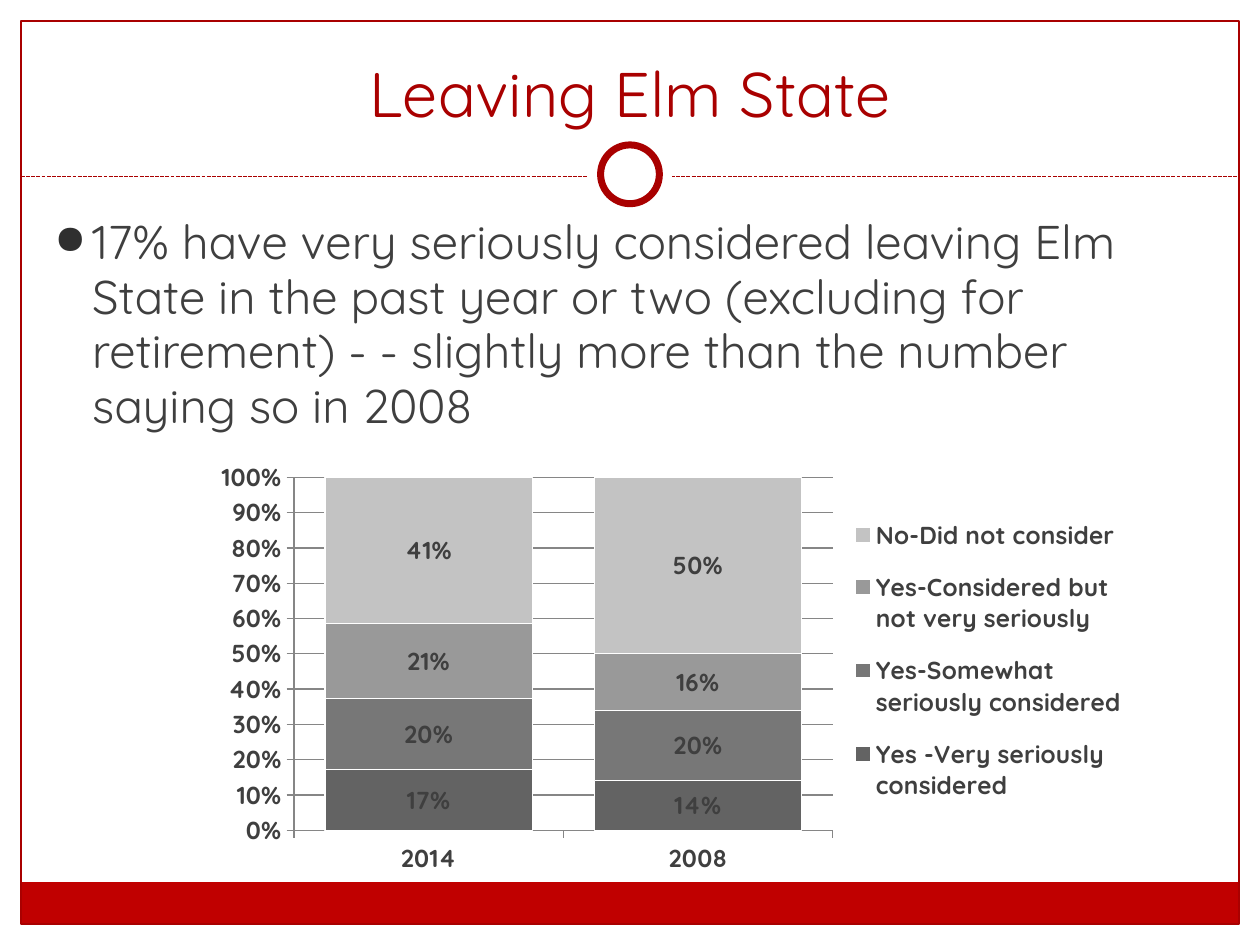
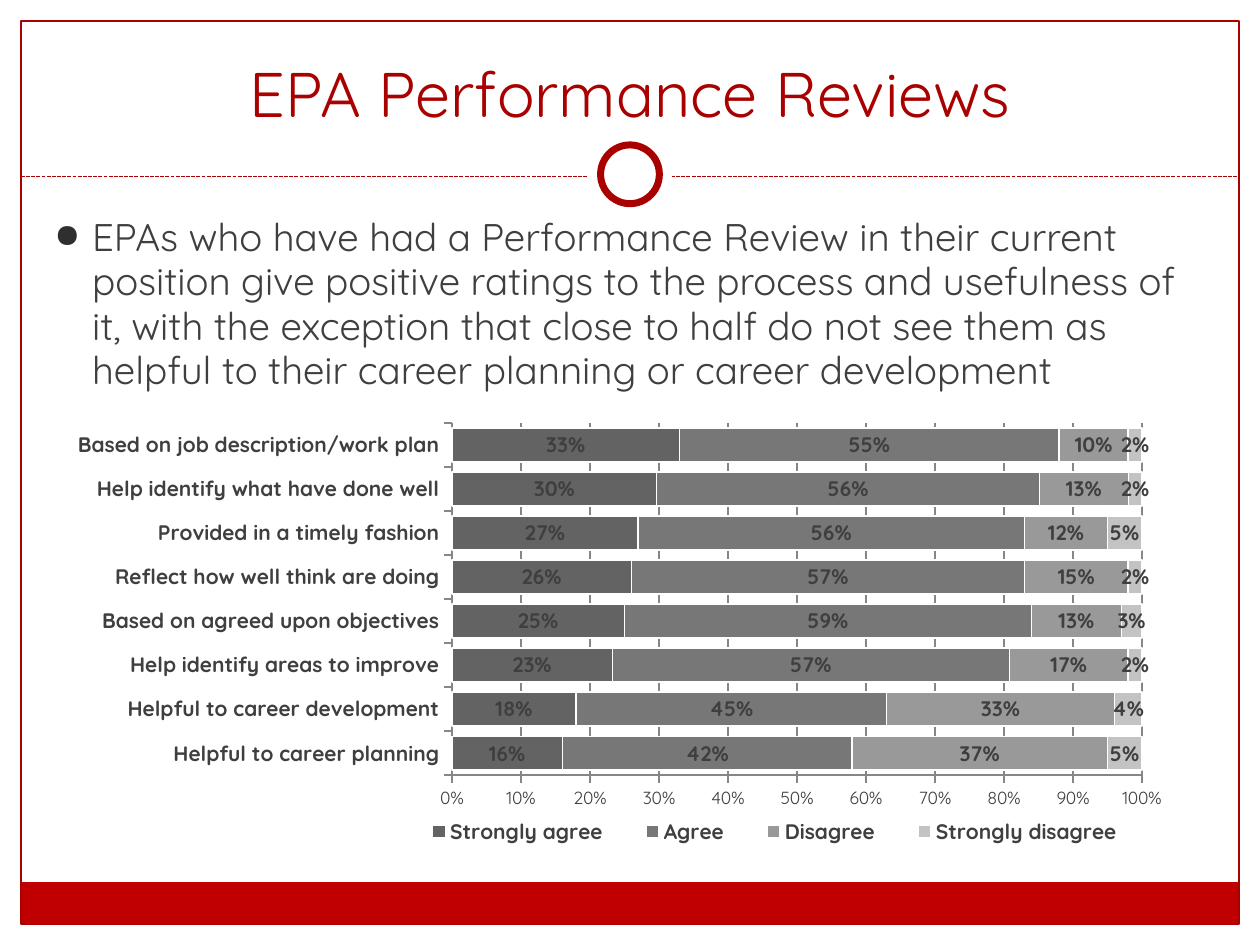
from dataclasses import dataclass

from lxml import etree
from pptx import Presentation
from pptx import util as u
from pptx.chart.data import CategoryChartData
from pptx.dml.color import RGBColor
from pptx.enum import chart as ch, dml, shapes, text
from pptx.oxml import parse_xml
from pptx.oxml.ns import nsdecls, qn


@dataclass(frozen=True)
class Theme:
    font: str = "Quicksand"
    paper: str = "FFFFFF"
    red: str = "A90000"
    band: str = "C00000"
    ink: str = "3F3F3F"
    bullet: str = "2F2F2F"
    axis: str = "868686"
    greys: tuple = ("636363", "777777", "999999", "C3C3C3")
    title_size: int = 36
    chart_size: int = 14
    label_size: int = 12
    tick_size: int = 10


THEME = Theme()
WIDTH, HEIGHT = u.Inches(10), u.Inches(7.5)
COLUMNS, ROWS = 60, 45


def grid(left, top, width, height):
    """Turn columns and rows of the slide grid into lengths."""
    col, row = WIDTH / COLUMNS, HEIGHT / ROWS
    return [u.Emu(round(v)) for v in (left * col, top * row, width * col, height * row)]


def rgb(color):
    return RGBColor.from_string(color)


def set_font(font, size, color=THEME.ink, bold=False):
    font.name, font.size, font.bold = THEME.font, u.Pt(size), bold
    font.color.rgb = rgb(color)


def set_line(line, color, width=0.75, dash=None):
    line.color.rgb = rgb(color)
    line.width = u.Pt(width)
    if dash:
        line.dash_style = dash


def write(tf, words, size, color=THEME.ink, align=text.PP_ALIGN.LEFT,
          anchor=text.MSO_ANCHOR.TOP, spacing=None):
    tf.word_wrap = True
    tf.auto_size = text.MSO_AUTO_SIZE.NONE
    tf.vertical_anchor = anchor
    p = tf.paragraphs[0]
    p.alignment = align
    p.line_spacing = spacing
    r = p.add_run()
    r.text = words
    set_font(r.font, size, color)
    return p


def add_bullet(p, indent=u.Inches(0.3)):
    pPr = p._p.get_or_add_pPr()
    pPr.set("marL", str(indent))
    pPr.set("indent", str(-indent))
    color = etree.SubElement(pPr, qn("a:buClr"))
    etree.SubElement(color, qn("a:srgbClr"), val=THEME.bullet)
    etree.SubElement(pPr, qn("a:buSzPct"), val="85000")
    etree.SubElement(pPr, qn("a:buChar"), char="●")


def add_figure(slide, kind, box, fill=None, line=None, width=0.75):
    sp = slide.shapes.add_shape(kind, *grid(*box))
    sp.shadow.inherit = False
    if fill:
        sp.fill.solid()
        sp.fill.fore_color.rgb = rgb(fill)
    else:
        sp.fill.background()
    if line:
        set_line(sp.line, line, width)
    else:
        sp.line.fill.background()


def add_frame(slide):
    """Border, footer band, dashed rule and ring that every slide carries."""
    rect, oval = shapes.MSO_SHAPE.RECTANGLE, shapes.MSO_SHAPE.OVAL
    add_figure(slide, rect, (1, 42, 58, 2), fill=THEME.band)
    add_figure(slide, rect, (1, 1, 58, 43), line=THEME.red)
    left, top, width, _ = grid(1, 8.4, 58, 0)
    rule = slide.shapes.add_connector(
        shapes.MSO_CONNECTOR.STRAIGHT, left, top, left + width, top)
    set_line(rule.line, THEME.red, dash=dml.MSO_LINE.SQUARE_DOT)
    etree.SubElement(rule.element.spPr, qn("a:effectLst"))
    add_figure(slide, oval, (28, 6.3, 4, 4), fill=THEME.paper)
    add_figure(slide, oval, (28.6, 6.9, 2.8, 2.8), THEME.paper, THEME.red, 4)


def add_slide(prs, title, statement, size):
    slide = prs.slides.add_slide(prs.slide_layouts[5])
    add_frame(slide)
    head = slide.shapes.title
    head.left, head.top, head.width, head.height = grid(2, 1.5, 56, 5)
    write(head.text_frame, title, THEME.title_size, THEME.red,
          align=text.PP_ALIGN.CENTER, anchor=text.MSO_ANCHOR.BOTTOM)
    body = slide.shapes.add_textbox(*grid(2, 10, 55.8, 30))
    add_bullet(write(body.text_frame, statement, size, spacing=0.965))
    return slide


def place(part, x, y, w, h, inner=False):
    """Fix a plot area or legend at shares of the chart's size."""
    for old in part.findall(qn("c:layout")):
        part.remove(old)
    target = '<c:layoutTarget val="inner"/>' if inner else ""
    sizes = "".join(f'<c:{k} val="{v}"/>' for k, v in zip("xywh", (x, y, w, h)))
    layout = parse_xml(
        f'<c:layout {nsdecls("c")}><c:manualLayout>{target}<c:xMode val="edge"/>'
        f'<c:yMode val="edge"/>{sizes}</c:manualLayout></c:layout>')
    position = part.find(qn("c:legendPos"))
    if position is None:
        part.insert(0, layout)
    else:
        position.addnext(layout)


def style_axis(axis, size, bold):
    axis.major_tick_mark = ch.XL_TICK_MARK.OUTSIDE
    axis.minor_tick_mark = ch.XL_TICK_MARK.NONE
    set_line(axis.format.line, THEME.axis)
    set_font(axis.tick_labels.font, size, bold=bold)


def add_stacked_chart(slide, kind, box, categories, series, size, tick_size,
                      tick_bold, legend_at, plot_box, legend_box):
    data = CategoryChartData(number_format="0%")
    data.categories = categories
    for name, values in series.items():
        data.add_series(name, [v / 100 for v in values])
    chart = slide.shapes.add_chart(kind, *grid(*box), data).chart
    chart.has_title = False
    set_font(chart.font, size, bold=True)

    style_axis(chart.category_axis, size, True)
    values = chart.value_axis
    style_axis(values, tick_size, tick_bold)
    values.minimum_scale, values.maximum_scale, values.major_unit = 0, 1, 0.1
    values.tick_labels.number_format = "0%"
    values.tick_labels.number_format_is_linked = False
    values.has_major_gridlines = True
    set_line(values.major_gridlines.format.line, THEME.axis)

    plot = chart.plots[0]
    plot.gap_width, plot.overlap, plot.vary_by_categories = 30, 100, False
    for s, grey in zip(plot.series, THEME.greys):
        s.format.fill.solid()
        s.format.fill.fore_color.rgb = rgb(grey)
        set_line(s.format.line, THEME.paper)
        labels = s.data_labels
        labels.show_value = True
        labels.number_format, labels.number_format_is_linked = "0%", False
        labels.position = ch.XL_LABEL_POSITION.CENTER
        set_font(labels.font, size, bold=True)

    chart.has_legend = True
    legend = chart.legend
    legend.position, legend.include_in_layout = legend_at, False
    set_font(legend.font, size, bold=True)
    place(chart.element.chart.plotArea, *plot_box, inner=True)
    place(legend._element, *legend_box)


def main():
    prs = Presentation()
    prs.slide_width, prs.slide_height = WIDTH, HEIGHT

    leaving = add_slide(
        prs, "Leaving Elm State",
        "17% have very seriously considered leaving Elm State in the past year or "
        "two (excluding for retirement) - - slightly more than the number saying "
        "so in 2008", 27)
    add_stacked_chart(
        leaving, ch.XL_CHART_TYPE.COLUMN_STACKED_100, (9.5, 21.5, 45, 20.5),
        ["2014", "2008"],
        {"Yes -Very seriously considered": (17, 14),
         "Yes-Somewhat seriously considered": (20, 20),
         "Yes-Considered but not very seriously": (21, 16),
         "No-Did not consider": (41, 50)},
        size=THEME.chart_size, tick_size=THEME.chart_size, tick_bold=True,
        legend_at=ch.XL_LEGEND_POSITION.RIGHT,
        plot_box=(0.1, 0.06, 0.57, 0.82), legend_box=(0.68, 0.11, 0.31, 0.75))

    reviews = add_slide(
        prs, "EPA Performance Reviews",
        "EPAs who have had a Performance Review in their current position give "
        "positive ratings to the process and usefulness of it, with the exception "
        "that close to half do not see them as helpful to their career planning "
        "or career development", 22)
    add_stacked_chart(
        reviews, ch.XL_CHART_TYPE.BAR_STACKED_100, (3.5, 19.5, 53, 21.5),
        ["Helpful to career planning", "Helpful to career development",
         "Help identify areas to improve", "Based on agreed upon objectives",
         "Reflect how well think are doing", "Provided in a timely fashion",
         "Help identify what have done well", "Based on job description/work plan"],
        {"Strongly agree": (16, 18, 23, 25, 26, 27, 30, 33),
         "Agree": (42, 45, 57, 59, 57, 56, 56, 55),
         "Disagree": (37, 33, 17, 13, 15, 12, 13, 10),
         "Strongly disagree": (5, 4, 2, 3, 2, 5, 2, 2)},
        size=THEME.label_size, tick_size=THEME.tick_size, tick_bold=False,
        legend_at=ch.XL_LEGEND_POSITION.BOTTOM,
        plot_box=(0.34, 0.03, 0.62, 0.78), legend_box=(0.29, 0.9, 0.68, 0.07))

    prs.save("out.pptx")


if __name__ == "__main__":
    main()
